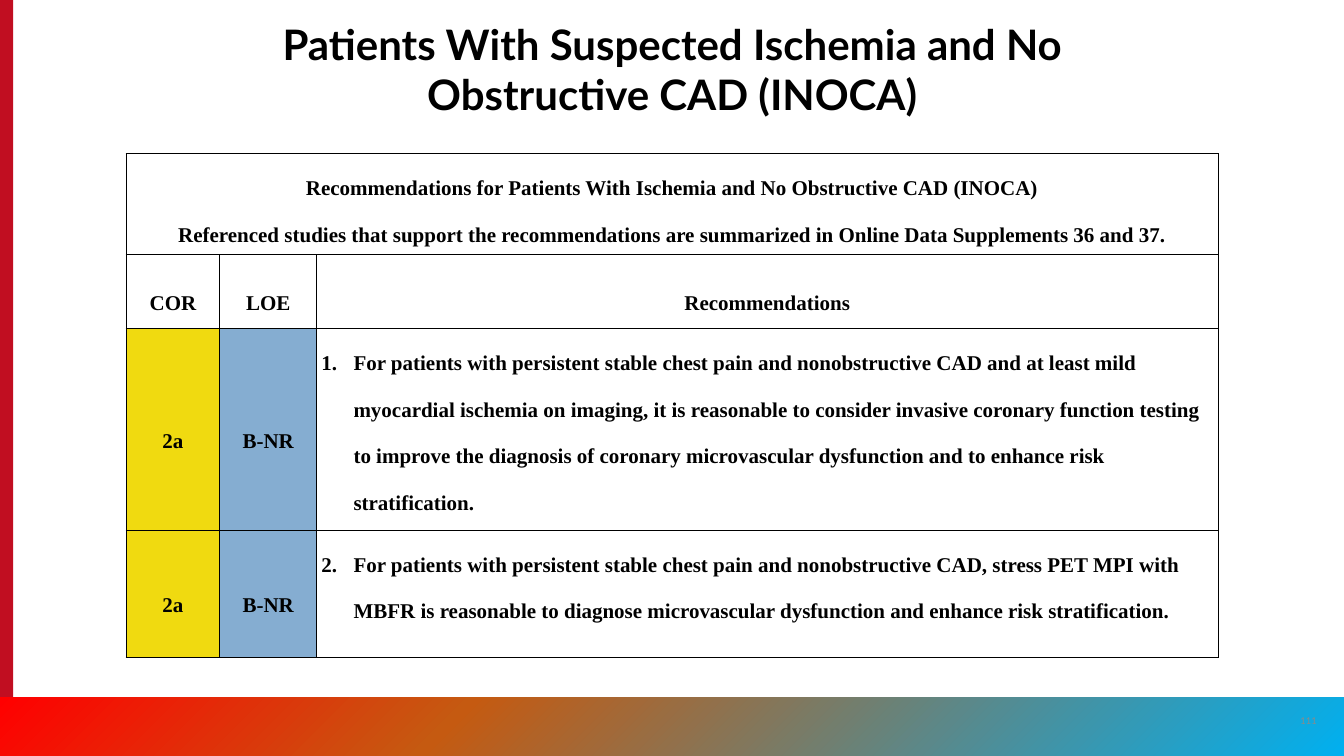
import copy
from dataclasses import dataclass

import pptx
import pptx.dml.color
import pptx.enum.shapes
import pptx.enum.text
import pptx.oxml
import pptx.oxml.ns
import pptx.util

Cm = pptx.util.Cm
Pt = pptx.util.Pt
ALIGN = pptx.enum.text.PP_ALIGN
ANCHOR = pptx.enum.text.MSO_ANCHOR


@dataclass(frozen=True)
class Theme:
    heading_font: str = "Lato"
    table_font: str = "Times New Roman"
    title_size: int = 36
    table_size: int = 18
    number_size: int = 8
    ink: str = "000000"
    muted: str = "8A8B8A"
    sidebar: str = "C10E21"
    moderate: str = "F0DA10"
    evidence: str = "85ADD1"
    band: tuple = (("FF0000", 0), ("C55A11", 0.34), ("00B0F0", 1))


THEME = Theme()

COLUMN_WIDTHS = (2.84, 2.92, 27.26)
ROW_HEIGHTS = (3.02, 2.24, 5.41, 3.84)
HEADING = (
    "Recommendations for Patients With Ischemia and No Obstructive CAD (INOCA)",
    "Referenced studies that support the recommendations are summarized in "
    "Online Data Supplements 36 and 37.",
)
COLUMN_NAMES = ("COR", "LOE", "Recommendations")
RECOMMENDATIONS = (
    ("2a", "B-NR",
     "For patients with persistent stable chest pain and nonobstructive CAD and at "
     "least mild myocardial ischemia on imaging, it is reasonable to consider invasive "
     "coronary function testing to improve the diagnosis of coronary microvascular "
     "dysfunction and to enhance risk stratification."),
    ("2a", "B-NR",
     "For patients with persistent stable chest pain and nonobstructive CAD, stress PET "
     "MPI with MBFR is reasonable to diagnose microvascular dysfunction and enhance "
     "risk stratification."),
)


def rgb(colour):
    return pptx.dml.color.RGBColor.from_string(colour)


def number_paragraph(paragraph, number):
    """Give the paragraph a hanging automatic number."""
    properties = paragraph._p.get_or_add_pPr()
    properties.set("marL", str(Cm(0.97)))
    properties.set("indent", str(-Cm(0.97)))
    properties.append(pptx.oxml.parse_xml(
        f'<a:buAutoNum {pptx.oxml.ns.nsdecls("a")} type="arabicPeriod" startAt="{number}"/>'))


def write(frame, *lines, font=THEME.table_font, size=THEME.table_size, colour=THEME.ink,
          bold=True, align=ALIGN.CENTER, spacing=None, number=None):
    for index, line in enumerate(lines):
        paragraph = frame.add_paragraph() if index else frame.paragraphs[0]
        if number:
            number_paragraph(paragraph, number)
        paragraph.alignment = align
        if spacing:
            paragraph.line_spacing = spacing
        run = paragraph.add_run()
        run.text = line
        run.font.name = font
        run.font.size = Pt(size)
        run.font.bold = bold
        run.font.color.rgb = rgb(colour)


def add_bar(slide, left, top, width, height):
    bar = slide.shapes.add_shape(pptx.enum.shapes.MSO_SHAPE.RECTANGLE,
                                 Cm(left), Cm(top), Cm(width), Cm(height))
    bar.shadow.inherit = False
    bar.line.fill.background()
    return bar


def add_sidebar(slide):
    sidebar = add_bar(slide, 0, 0, 0.4, 22.86)
    sidebar.fill.solid()
    sidebar.fill.fore_color.rgb = rgb(THEME.sidebar)


def add_footer_band(slide):
    band = add_bar(slide, 0, 21.08, 40.64, 1.78)
    band.fill.gradient()
    band.fill.gradient_angle = 315
    stop_list = band._element.spPr.find(".//" + pptx.oxml.ns.qn("a:gsLst"))
    stop_list.append(copy.deepcopy(stop_list[-1]))
    for stop, (colour, position) in zip(band.fill.gradient_stops, THEME.band):
        stop.color.rgb = rgb(colour)
        stop.position = position


def add_page_number(slide, number):
    box = slide.shapes.add_textbox(Cm(38.96), Cm(21.18), Cm(1.22), Cm(1.22))
    frame = box.text_frame
    frame.word_wrap = True
    frame.vertical_anchor = ANCHOR.MIDDLE
    write(frame, number, font=THEME.heading_font, size=THEME.number_size,
          colour=THEME.muted, bold=False)


def set_title(slide, text):
    title = slide.shapes.title
    title.left, title.top, title.width, title.height = Cm(6.12), Cm(0.43), Cm(28.42), Cm(2.54)
    frame = title.text_frame
    frame.auto_size = pptx.enum.text.MSO_AUTO_SIZE.NONE
    frame.word_wrap = True
    frame.vertical_anchor = ANCHOR.TOP
    write(frame, text, font=THEME.heading_font, size=THEME.title_size)


def outline_cell(cell):
    properties = cell._tc.get_or_add_tcPr()
    for side in "LRTB":
        properties.append(pptx.oxml.parse_xml(
            f'<a:ln{side} {pptx.oxml.ns.nsdecls("a")} w="{Pt(1)}"><a:solidFill>'
            f'<a:srgbClr val="{THEME.ink}"/></a:solidFill></a:ln{side}>'))


def fill_cell(cell, *lines, fill=None, anchor=ANCHOR.MIDDLE, **text_format):
    cell.margin_left = cell.margin_right = Cm(0.15)
    cell.margin_top = cell.margin_bottom = 0
    cell.vertical_anchor = anchor
    if fill:
        cell.fill.solid()
        cell.fill.fore_color.rgb = rgb(fill)
    write(cell.text_frame, *lines, spacing=2.0, **text_format)


def add_recommendations(slide):
    table = slide.shapes.add_table(
        len(ROW_HEIGHTS), len(COLUMN_WIDTHS), Cm(3.81), Cm(4.65),
        Cm(sum(COLUMN_WIDTHS)), Cm(sum(ROW_HEIGHTS))).table
    table.first_row = table.horz_banding = False
    for column, width in zip(table.columns, COLUMN_WIDTHS):
        column.width = Cm(width)
    for row, height in zip(table.rows, ROW_HEIGHTS):
        row.height = Cm(height)
    for cell in table.iter_cells():
        outline_cell(cell)
        cell.fill.background()

    table.cell(0, 0).merge(table.cell(0, 2))
    fill_cell(table.cell(0, 0), *HEADING, anchor=ANCHOR.TOP)
    for column, name in enumerate(COLUMN_NAMES):
        fill_cell(table.cell(1, column), name)
    for number, (cor, loe, advice) in enumerate(RECOMMENDATIONS, start=1):
        row = number + 1
        fill_cell(table.cell(row, 0), cor, fill=THEME.moderate)
        fill_cell(table.cell(row, 1), loe, fill=THEME.evidence)
        fill_cell(table.cell(row, 2), advice, anchor=ANCHOR.TOP,
                  align=ALIGN.LEFT, number=number)


def main():
    deck = pptx.Presentation()
    deck.slide_width, deck.slide_height = Cm(40.64), Cm(22.86)
    slide = deck.slides.add_slide(deck.slide_layouts.get_by_name("Title Only"))
    add_sidebar(slide)
    add_footer_band(slide)
    add_page_number(slide, "111")
    set_title(slide, "Patients With Suspected Ischemia and No Obstructive CAD (INOCA)")
    add_recommendations(slide)
    deck.save("out.pptx")


if __name__ == "__main__":
    main()
